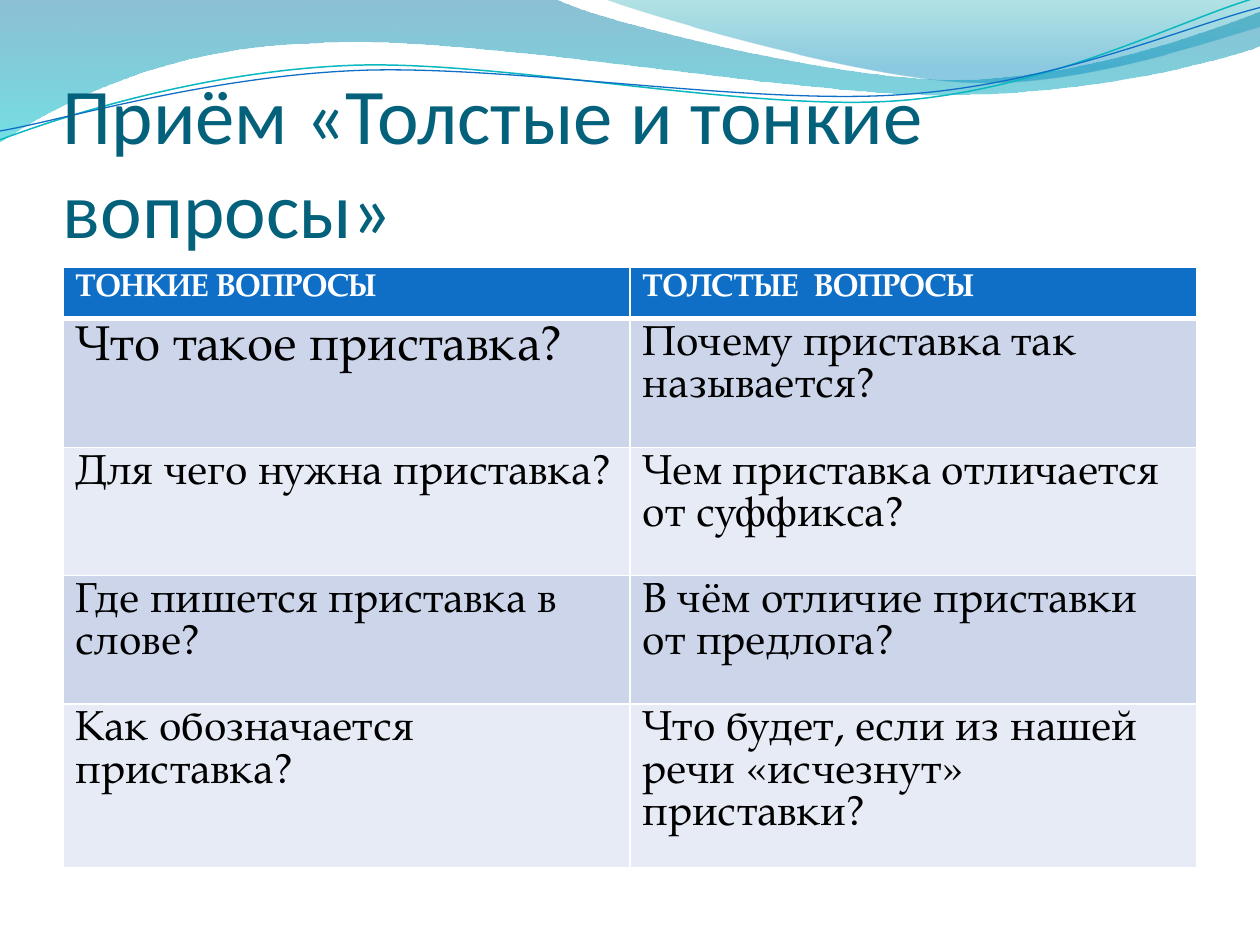
"""Build a slide that compares thin and thick questions about prefixes."""
from lxml.etree import SubElement
from pptx import Presentation
from pptx.dml.color import RGBColor
from pptx.enum.text import MSO_ANCHOR
from pptx.oxml import parse_xml
from pptx.oxml.ns import nsdecls, qn
from pptx.util import Inches, Pt

WHITE = RGBColor(0xFF, 0xFF, 0xFF)
BLACK = RGBColor(0x00, 0x00, 0x00)
TITLE_TEAL = RGBColor(0x04, 0x61, 0x7B)
BLUE = RGBColor(0x0F, 0x6F, 0xC6)
LINE_TEAL = RGBColor(0x0A, 0xB8, 0xBF)
BAND_DARK = RGBColor(0xCC, 0xD5, 0xEA)
BAND_LIGHT = RGBColor(0xE7, 0xEB, 0xF5)
WAVE_BLUE = RGBColor(0x00, 0x74, 0xA1)
WAVE_CYAN = RGBColor(0x00, 0xC6, 0xCF)
CREST_TEAL = RGBColor(0x00, 0xA1, 0xA9)
CREST_BLUE = RGBColor(0x00, 0x8B, 0xBF)

WAVE = [(0, 0), (4.4, -0.01), (4.76, 0.17, 6.64, 0.63, 7.58, 0.63),
        (8.53, 0.63, 9.58, 0.26, 10, 0.09), (10.01, 0.36),
        (9.83, 0.44, 8.7, 0.76, 7.46, 0.75), (6.22, 0.75, 3.82, 0.28, 2.57, 0.34),
        (1.29, 0.36, 0.46, 0.83, -0.01, 1.13)]
CREST = [(4.79, -0.01), (5.09, 0.11, 6.82, 0.62, 7.69, 0.65),
         (8.56, 0.69, 9.61, 0.32, 10, 0.21), (10, 0)]
TEAL_CURVE = [(0, 1.11), (0.48, 0.93, 1.58, 0.57, 2.77, 0.52),
              (3.95, 0.47, 5.93, 0.89, 7.13, 0.8), (8.33, 0.71, 9.38, 0.15, 9.98, -0.02)]
BLUE_CURVE = [(0, 1.04), (0.47, 0.96, 1.64, 0.61, 2.83, 0.56),
              (4.03, 0.51, 5.97, 0.84, 7.17, 0.75), (8.36, 0.67, 9.41, 0.21, 10, 0.06)]

HEADINGS = ("ТОНКИЕ ВОПРОСЫ", "ТОЛСТЫЕ  ВОПРОСЫ")
QUESTIONS = [
    ("Что такое приставка?", "Почему приставка так называется?"),
    ("Для чего нужна приставка?", "Чем приставка отличается от суффикса?"),
    ("Где пишется приставка в слове?", "В чём отличие приставки от предлога?"),
    ("Как обозначается приставка?", "Что будет, если из нашей речи «исчезнут» приставки?"),
]
ROW_HEIGHTS = (0.41, 1.02, 1.02, 1.02, 0.41)


class SlideWriter:
    """Hold the fonts and the current slide, and add elements to it."""

    title_font = "Calibri"
    table_font = "TeX Gyre Pagella"

    def __init__(self, page):
        self.page = page

    def style(self, para, name, size, color, bold=False):
        """Set the font of a whole paragraph."""
        font = para.font
        font.name, font.size, font.bold = name, Pt(size), bold
        font.color.rgb = color

    def outline(self, segments, close):
        """Add a freeform of straight lines and cubic curves."""
        points = [tuple(Inches(value) for value in segment) for segment in segments]
        builder = self.page.shapes.build_freeform(*points[0])
        builder.add_line_segments([point[-2:] for point in points[1:]], close=close)
        shape = builder.convert_to_shape()
        shape.shadow.inherit = False
        lines = list(shape._element.spPr.iter(qn("a:lnTo")))
        for line, point in zip(lines, points[1:]):
            if len(point) == 6:
                pairs = zip(point[::2], point[1::2])
                marks = "".join(f'<a:pt x="{x - shape.left}" y="{y - shape.top}"/>' for x, y in pairs)
                bend = parse_xml(f'<a:cubicBezTo {nsdecls("a")}>{marks}</a:cubicBezTo>')
                line.getparent().replace(line, bend)
        return shape

    def wave(self, segments, stops):
        """Add a translucent area that shades from top to bottom."""
        shape = self.outline(segments, True)
        shape.fill.gradient()
        shape.fill.gradient_angle = 270
        for stop, (position, color, _) in zip(shape.fill.gradient_stops, stops):
            stop.position, stop.color.rgb = position, color
        colors = shape._element.spPr.iter(qn("a:srgbClr"))
        for element, (_, _, opacity) in zip(colors, stops):
            SubElement(element, qn("a:alpha"), val=str(opacity * 1000))
        shape.line.fill.background()

    def curve(self, segments, color, width):
        """Add an open curved line."""
        shape = self.outline(segments, False)
        shape.fill.background()
        shape.line.color.rgb = color
        shape.line.width = Pt(width)

    def title(self, text, left, top, width, height):
        """Add the title, resting on the bottom of its box."""
        box = self.page.shapes.add_textbox(Inches(left), Inches(top), Inches(width), Inches(height))
        frame = box.text_frame
        frame.word_wrap = True
        frame.vertical_anchor = MSO_ANCHOR.BOTTOM
        frame.margin_left = frame.margin_right = frame.margin_bottom = 0
        frame.margin_top = Inches(0.05)
        para = frame.paragraphs[0]
        para.text = text
        self.style(para, self.title_font, 45, TITLE_TEAL)

    def cell(self, cell, text, size, color, fill, bold=False, bottom=1):
        """Fill in one table cell with white borders."""
        cell.text = text
        self.style(cell.text_frame.paragraphs[0], self.table_font, size, color, bold)
        properties = cell._tc.get_or_add_tcPr()
        for side, width in (("L", 1), ("R", 1), ("T", 1), ("B", bottom)):
            border = SubElement(properties, qn(f"a:ln{side}"), w=str(Pt(width)))
            SubElement(SubElement(border, qn("a:solidFill")), qn("a:srgbClr"), val=str(WHITE))
        cell.fill.solid()
        cell.fill.fore_color.rgb = fill

    def table(self, left, top, width):
        """Add the table of questions."""
        table = self.page.shapes.add_table(
            len(ROW_HEIGHTS), len(HEADINGS), Inches(left), Inches(top),
            Inches(width), Inches(sum(ROW_HEIGHTS))).table
        for row, height in zip(table.rows, ROW_HEIGHTS):
            row.height = Inches(height)
        for column, heading in enumerate(HEADINGS):
            self.cell(table.cell(0, column), heading, 18, WHITE, BLUE, bold=True, bottom=3)
        for row, questions in enumerate(QUESTIONS, 1):
            fill = BAND_DARK if row % 2 else BAND_LIGHT
            for column, question in enumerate(questions):
                size = 28 if (row, column) == (1, 0) else 24
                self.cell(table.cell(row, column), question, size, BLACK, fill)


def main():
    """Build and save the deck."""
    deck = Presentation()
    deck.slide_width, deck.slide_height = Inches(10), Inches(7.5)
    writer = SlideWriter(deck.slides.add_slide(deck.slide_layouts[6]))
    writer.wave(WAVE, [(0, WAVE_BLUE, 45), (1, WAVE_CYAN, 55)])
    writer.wave(CREST, [(0, CREST_TEAL, 30), (0.8, CREST_BLUE, 45)])
    writer.curve(TEAL_CURVE, LINE_TEAL, 0.85)
    writer.curve(BLUE_CURVE, BLUE, 0.75)
    writer.title("Приём «Толстые и тонкие вопросы»", 0.5, 0.77, 9, 1.25)
    writer.table(0.5, 2.12, 9)
    deck.save("out.pptx")


if __name__ == "__main__":
    main()
